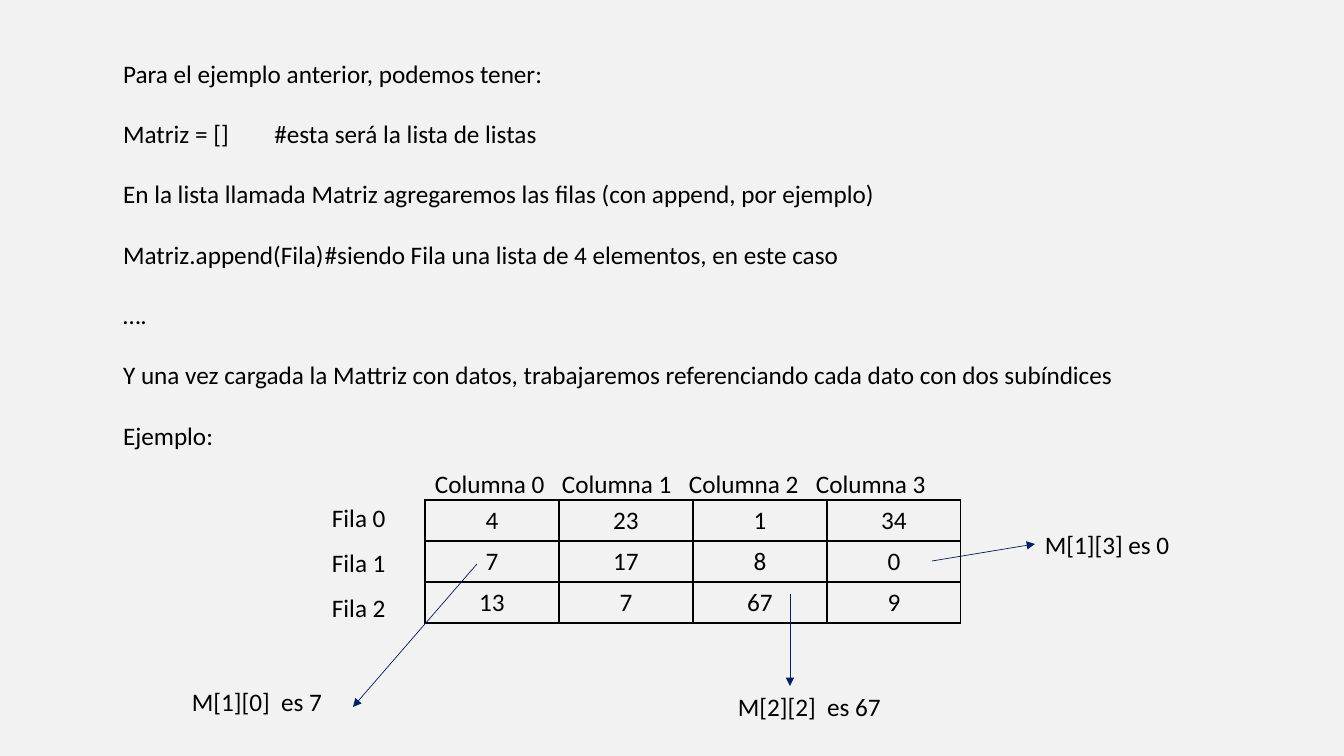
from lxml.etree import SubElement
from pptx import Presentation
from pptx.dml.color import RGBColor
from pptx.enum.shapes import MSO_CONNECTOR
from pptx.enum.text import MSO_ANCHOR, PP_ALIGN
from pptx.oxml import parse_xml
from pptx.oxml.ns import nsdecls, qn
from pptx.util import Emu, Pt

EMU_PER_PX = 914400 / 100.8
FONT = "Calibri"
BLACK, NAVY, BACKGROUND = "000000", "002060", "F2F2F2"
LABEL_HEIGHT = 40
EXPLANATION = [
    ("Para el ejemplo anterior, podemos tener:", ()),
    ("Matriz = []\t#esta será la lista de listas", (152,)),
    ("En la lista llamada Matriz agregaremos las filas (con append, por ejemplo)", ()),
    ("Matriz.append(Fila)\t#siendo Fila una lista de 4 elementos, en este caso", (241,)),
    ("….", ()),
    ("Y una vez cargada la Mattriz con datos, trabajaremos referenciando cada dato "
     "con dos subíndices", ()),
    ("Ejemplo:", ()),
]
MATRIX = [[4, 23, 1, 34], [7, 17, 8, 0], [13, 7, 67, 9]]


def px(length):
    return Emu(round(length * EMU_PER_PX))


def color(hex_string):
    return RGBColor.from_string(hex_string)


def write(paragraph, text, size=18, align=PP_ALIGN.LEFT, space_after=0, tabs=()):
    """Fill a paragraph; tabs are stops in px from the start of the text."""
    paragraph.alignment = align
    paragraph.space_before, paragraph.space_after = Pt(0), Pt(space_after)
    run = paragraph.add_run()
    run.text = text
    run.font.name, run.font.size = FONT, Pt(size)
    run.font.color.rgb = color(BLACK)
    if tabs:
        tab_list = SubElement(paragraph._p.get_or_add_pPr(), qn("a:tabLst"))
        for stop in tabs:
            SubElement(tab_list, qn("a:tab"), pos=str(px(stop)), algn="l")


def add_label(slide, text, left, top, width, **text_format):
    label = slide.shapes.add_textbox(px(left), px(top), px(width), px(LABEL_HEIGHT))
    label.text_frame.word_wrap = True
    write(label.text_frame.paragraphs[0], text, **text_format)
    return label


def add_explanation(slide, left, top, width, height):
    body = slide.placeholders[1]
    body.left, body.top, body.width, body.height = map(px, (left, top, width, height))
    frame = body.text_frame
    frame.word_wrap, frame.vertical_anchor = True, MSO_ANCHOR.TOP
    for index, (text, tabs) in enumerate(EXPLANATION):
        paragraph = frame.add_paragraph() if index else frame.paragraphs[0]
        properties = paragraph._p.get_or_add_pPr()
        properties.set("marL", "0")
        properties.set("indent", "0")
        SubElement(properties, qn("a:buNone"))
        write(paragraph, text, space_after=21.5, tabs=tabs)


def draw_borders(cell):
    properties = cell._tc.get_or_add_tcPr()
    for position, side in enumerate(("lnL", "lnR", "lnT", "lnB")):
        properties.insert(position, parse_xml(
            f'<a:{side} {nsdecls("a")} w="{Pt(1)}"><a:solidFill>'
            f'<a:srgbClr val="{BLACK}"/></a:solidFill></a:{side}>'))


def add_matrix(slide, left, top, width, height):
    """Place the table with its column headings above and row headings at left."""
    rows, columns = len(MATRIX), len(MATRIX[0])
    table = slide.shapes.add_table(
        rows, columns, px(left), px(top), px(width), px(height)).table
    table.first_row = table.horz_banding = False
    for row, values in enumerate(MATRIX):
        for column, value in enumerate(values):
            cell = table.cell(row, column)
            cell.fill.background()
            draw_borders(cell)
            write(cell.text_frame.paragraphs[0], str(value), align=PP_ALIGN.CENTER)
        add_label(slide, f"Fila {row}", left - 103, top - 3 + 45 * row, 76)
    headings = "\t".join(f"Columna {column}" for column in range(columns))
    add_label(slide, headings, left, top - 37, width,
              tabs=[127 * column for column in range(1, columns)])


def add_arrow(slide, start, end, target=None):
    """Draw an arrow, joined to the left side of target if one is given."""
    arrow = slide.shapes.add_connector(
        MSO_CONNECTOR.STRAIGHT, *map(px, (*start, *end)))
    if target is not None:
        arrow.end_connect(target, 1)
    arrow.line.color.rgb, arrow.line.width = color(NAVY), Pt(0.5)
    SubElement(arrow.line._get_or_add_ln(), qn("a:tailEnd"), type="triangle")
    SubElement(arrow._element.spPr, qn("a:effectLst"))


def add_references(slide, left, top):
    """Place the three element references around the table corner given."""
    width = 233
    add_label(slide, "M[1][0]  es 7", left - 243, top + 181, width)
    last_in_row = add_label(slide, "M[1][3] es 0", left + 610, top + 24, width)
    add_label(slide, "M[2][2]  es 67", left + 303, top + 186, width)
    add_arrow(slide, (left + 52, top + 64), (left - 72, top + 207))
    add_arrow(slide, (left + 507, top + 61), (left + 610, top + 44), last_in_row)
    add_arrow(slide, (left + 365, top + 94), (left + 365, top + 186))


def main():
    presentation = Presentation()
    presentation.slide_width, presentation.slide_height = px(1344), px(756)
    slide = presentation.slides.add_slide(presentation.slide_layouts[1])
    slide.background.fill.solid()
    slide.background.fill.fore_color.rgb = color(BACKGROUND)
    title = slide.shapes.title._element
    title.getparent().remove(title)
    add_explanation(slide, 113, 53, 1157, 437)
    add_matrix(slide, 425, 500, 536, 123)
    add_references(slide, 425, 500)
    presentation.save("out.pptx")


if __name__ == "__main__":
    main()
